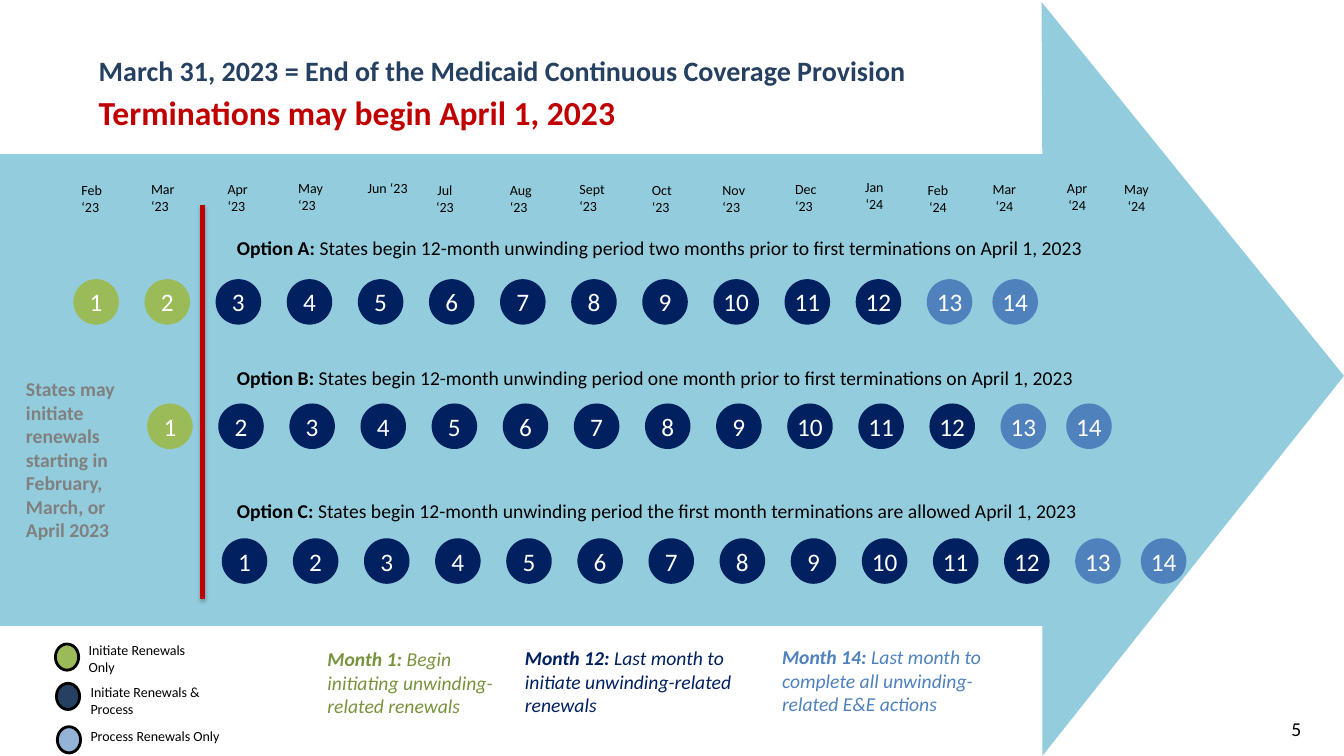
import dataclasses

import lxml.etree
import pptx
import pptx.dml.color
import pptx.enum.shapes
import pptx.enum.text
import pptx.oxml.ns
import pptx.util


@dataclasses.dataclass(frozen=True)
class Theme:
    font: str = "Calibri"
    black: str = "000000"
    white: str = "FFFFFF"
    arrow: str = "93CDDD"
    green: str = "9BBB59"
    dark_green: str = "77933C"
    navy: str = "002060"
    slate: str = "254061"
    blue: str = "4F81BD"
    pale_blue: str = "95B3D7"
    red: str = "C00000"
    grey: str = "808080"
    headline: int = 24
    title: int = 20
    number: int = 18
    body: int = 14
    small: int = 10


THEME = Theme()
ALIGN = pptx.enum.text.PP_ALIGN
OVAL = pptx.enum.shapes.MSO_SHAPE.OVAL


def pts(*values):
    return [pptx.util.Pt(v) for v in values]


def rgb(color):
    return pptx.dml.color.RGBColor.from_string(color)


def style(p, size, color, align=ALIGN.LEFT, bold=None, italic=None):
    p.alignment = align
    p.font.name, p.font.size = THEME.font, pptx.util.Pt(size)
    p.font.color.rgb = rgb(color)
    p.font.bold, p.font.italic = bold, italic


def add_text(slide, box, lines, size, color, lead="", **fmt):
    """Add a wrapped text box; lead is a bold opening to the first line."""
    tf = slide.shapes.add_textbox(*pts(*box)).text_frame
    tf.word_wrap = True
    for i, line in enumerate(lines):
        p = tf.paragraphs[0] if i == 0 else tf.add_paragraph()
        if lead and i == 0:
            r = p.add_run()
            r.text = lead
            r.font.bold = True
        p.add_run().text = line
        style(p, size, color, **fmt)


def add_circle(slide, box, color, number=None, outline=None):
    sp = slide.shapes.add_shape(OVAL, *pts(*box))
    sp.shadow.inherit = False
    sp.fill.solid()
    sp.fill.fore_color.rgb = rgb(color)
    if outline:
        sp.line.color.rgb = rgb(outline)
        sp.line.width = pptx.util.Pt(2)
    else:
        sp.line.fill.background()
    if number:
        tf = sp.text_frame
        tf.word_wrap = False
        tf.margin_left = tf.margin_right = 0
        tf.vertical_anchor = pptx.enum.text.MSO_ANCHOR.MIDDLE
        p = tf.paragraphs[0]
        p.text = str(number)
        style(p, THEME.number, THEME.white, ALIGN.CENTER)


def add_arrow(slide, box):
    x, y, w, h = box
    neck = x + w - 215.5
    outline = [(x, y + 108.7), (neck, y + 108.7), (neck - 0.5, y), (x + w, y + 267.1),
               (neck, y + h), (neck, y + 445.7), (x, y + 445.7)]
    corners = [pts(*corner) for corner in outline]
    builder = slide.shapes.build_freeform(*corners[0])
    builder.add_line_segments(corners[1:], close=True)
    sp = builder.convert_to_shape()
    sp.shadow.inherit = False
    sp.fill.solid()
    sp.fill.fore_color.rgb = rgb(THEME.arrow)
    sp.line.fill.background()


def add_headings(slide, box):
    x, y, w, h = box
    add_text(slide, (x, y, w, 31.7),
             ["March 31, 2023 = End of the Medicaid Continuous Coverage Provision"],
             THEME.title, THEME.slate, bold=True)
    add_text(slide, (x, y + 27.3, w, h - 27.3), ["Terminations may begin April 1, 2023"],
             THEME.headline, THEME.red, bold=True)


def add_months(slide, box):
    x, y, w, h = box
    # Month, year, offset from the left and top of the strip
    months = [("Feb", 23, 0, 2.2), ("Mar", 23, 49.7, 1.4), ("Apr", 23, 104.4, 1.4),
              ("May", 23, 154.8, 0.7), ("Jun", 23, 204.5, 0.7), ("Jul", 23, 245.5, 2.2),
              ("Aug", 23, 306, 2.2), ("Sept", 23, 355.7, 1.4), ("Oct", 23, 407.5, 2.2),
              ("Nov", 23, 457.9, 2.2), ("Dec", 23, 509.8, 1.4), ("Jan", 24, 552.2, 0),
              ("Feb", 24, 597.6, 2.2), ("Mar", 24, 645.1, 1.4), ("Apr", 24, 697, 0.7),
              ("May", 24, 739.4, 1.4)]
    for month, year, dx, dy in months:
        centred = year == 24 or month == "Jul"
        lines = [month, f"‘{year}"] if centred else [f"{month} ‘{year}"]
        width = 44.5 if month == "Jun" else 42.5
        add_text(slide, (x + dx, y + dy, width, h), lines, THEME.small, THEME.black,
                 align=ALIGN.CENTER if centred else ALIGN.LEFT)


def add_option(slide, box, name, description, label_x, circle_dy, early):
    """Label plus fourteen numbered months; the first `early` ones are green."""
    x, y, w, h = box
    add_text(slide, (label_x, y, 711, 24.5), [description], THEME.body, THEME.black,
             lead=f"Option {name}: ")
    size, pitch, last_pitch = 32.5, 50.8, 46.9
    for n in range(1, 15):
        color = THEME.green if n <= early else THEME.navy if n <= 12 else THEME.blue
        dx = 12 * pitch + last_pitch if n == 14 else (n - 1) * pitch
        add_circle(slide, (x + dx, y + circle_dy, size, size), color, n)


def add_start_line(slide, box):
    x, y, w, h = box
    line = slide.shapes.add_connector(pptx.enum.shapes.MSO_CONNECTOR.STRAIGHT,
                                      *pts(x, y, x + w, y + h))
    line.line.color.rgb = rgb(THEME.red)
    line.line.width = pptx.util.Pt(3)
    # Soft shadow below the line
    qn, sub = pptx.oxml.ns.qn, lxml.etree.SubElement
    effects = sub(line._element.spPr, qn("a:effectLst"))
    shadow = sub(effects, qn("a:outerShdw"), blurRad=str(pptx.util.Pt(3.1)),
                 dist=str(pptx.util.Pt(1.8)), dir="5400000", rotWithShape="0")
    color = sub(shadow, qn("a:srgbClr"), val=THEME.black)
    sub(color, qn("a:alpha"), val="35000")


def add_legend(slide, box):
    x, y, w, h = box
    # Colour, label lines, circle offset, label offset
    entries = [(THEME.green, ["Initiate Renewals", "Only"], (0, 5), (16.6, 0)),
               (THEME.slate, ["Initiate Renewals & Process"], (0.7, 33.1), (18, 29.5)),
               (THEME.pale_blue, ["Process Renewals Only"], (1.4, 64.1), (18, 61.2))]
    for color, lines, (cx, cy), (tx, ty) in entries:
        add_circle(slide, (x + cx, y + cy, 16.6, 18.7), color, outline=THEME.black)
        add_text(slide, (x + tx, y + ty, w - 18, 22 if ty > 60 else 36), lines,
                 THEME.small, THEME.black)


def add_milestones(slide, box):
    x, y, w, h = box
    notes = [(1, "Begin initiating unwinding-related renewals", THEME.dark_green, 0, 1.4, 152.6),
             (12, "Last month to initiate unwinding-related renewals", THEME.navy, 141.1, 0.7, 185),
             (14, "Last month to complete all unwinding- related E&E actions", THEME.blue,
              324.7, 0, 181.4)]
    for month, note, color, dx, dy, width in notes:
        add_text(slide, (x + dx, y + dy, width, h), [note], THEME.body, color,
                 lead=f"Month {month}: ", italic=True)


def main():
    prs = pptx.Presentation()
    prs.slide_width, prs.slide_height = pts(960, 540)
    slide = prs.slides.add_slide(prs.slide_layouts[6])

    add_text(slide, (720.7, 508.3, 216, 28.8), ["5"], THEME.body, THEME.black, align=ALIGN.RIGHT)
    add_arrow(slide, (0, 1.4, 960, 538.6))
    add_headings(slide, (63.4, 34.6, 684.7, 63.3))
    add_months(slide, (51.1, 123.8, 782, 31.7))

    # Options: name, description, row left, row top, gap to circles, green months
    period = "States begin 12-month unwinding period"
    options = [
        ("A", f"{period} two months prior to first terminations on April 1, 2023", 52.4, 164.9, 34.5, 2),
        ("B", f"{period} one month prior to first terminations on April 1, 2023", 105.1, 257.8, 30.4, 1),
        ("C", f"{period} the first month terminations are allowed April 1, 2023", 158.4, 352.8, 31.7, 0)]
    for name, description, left, top, circle_dy, early in options:
        add_option(slide, (left, top, 690, 67), name, description, 162.2, circle_dy, early)

    add_start_line(slide, (144.7, 146.2, 0, 281.5))
    add_text(slide, (11.5, 265.7, 91.4, 126),
             ["States may initiate renewals starting in February, March, or April 2023"],
             THEME.body, THEME.grey, bold=True)
    add_legend(slide, (39.6, 455, 128.9, 83))
    add_milestones(slide, (226.8, 457.2, 506, 58.3))
    prs.save("out.pptx")


if __name__ == "__main__":
    main()
